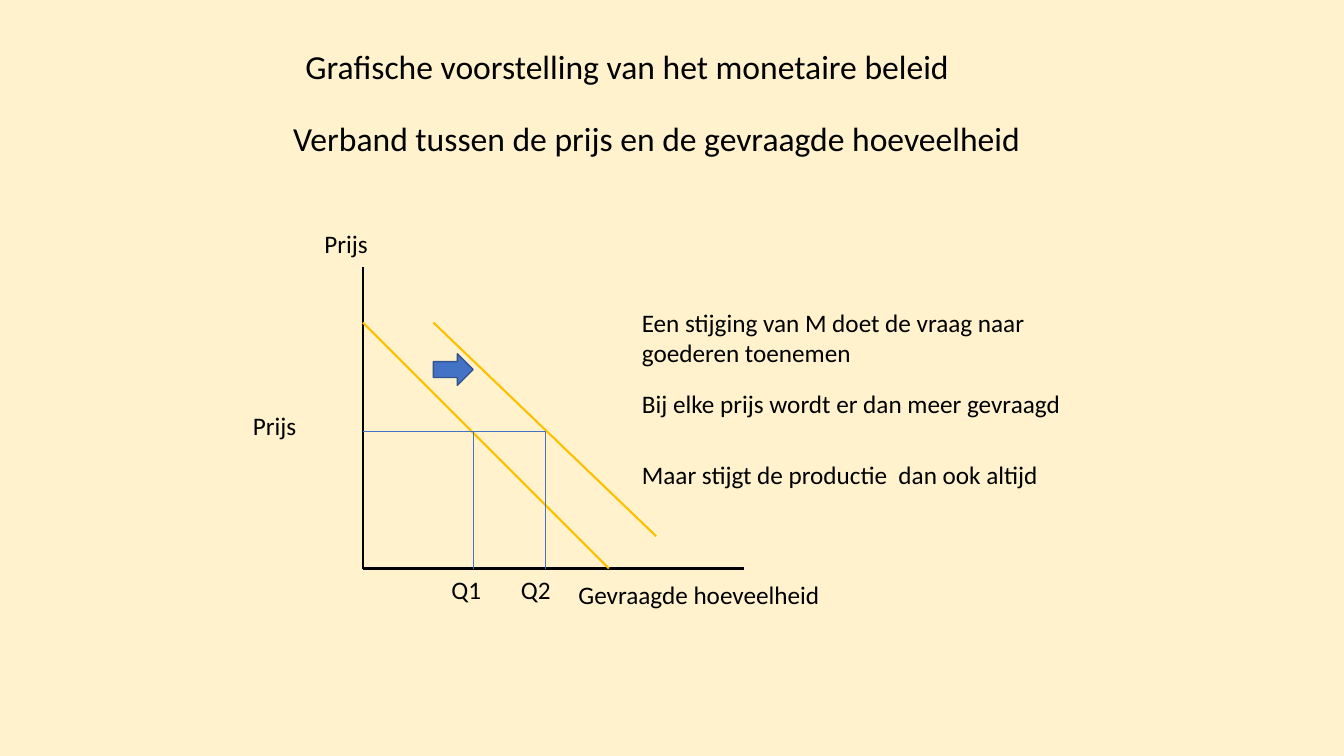
from dataclasses import dataclass

from lxml import etree
from pptx import Presentation
from pptx.dml.color import RGBColor
from pptx.enum import shapes, text
from pptx.oxml.ns import qn
from pptx.util import Pt


@dataclass(frozen=True)
class Theme:
    font: str = "Calibri"
    background: str = "FFF2CC"
    ink: str = "000000"
    demand: str = "FFC000"
    accent: str = "4472C4"
    accent_edge: str = "325491"
    heading: int = 24
    label: int = 18


THEME = Theme()

# Chart positions in points
ORIGIN_X, ORIGIN_Y = 259.2, 406.1
AXIS_TOP, AXIS_RIGHT = 190.8, 531.4
DEMAND_TOP = 230.4
SHIFT_X = 309.6
PRICE_Y = 308.2
Q1_X, Q2_X = 338.4, 389.5
NOTES_X = 451.4


def rgb(value):
    return RGBColor.from_string(value)


def format_text(sp, content, size):
    tf = sp.text_frame
    tf.text = content
    tf.word_wrap = True
    tf.auto_size = text.MSO_AUTO_SIZE.SHAPE_TO_FIT_TEXT
    tf.vertical_anchor = text.MSO_ANCHOR.TOP
    p = tf.paragraphs[0]
    p.alignment = text.PP_ALIGN.LEFT
    font = p.runs[0].font
    font.name, font.size = THEME.font, Pt(size)
    font.color.rgb = rgb(THEME.ink)


def add_title(s, content, left, top, width, height):
    sp = s.shapes.title
    sp.left, sp.top, sp.width, sp.height = map(Pt, (left, top, width, height))
    format_text(sp, content, THEME.heading)


def add_label(s, content, left, top, width, height=29, size=THEME.label):
    sp = s.shapes.add_textbox(*map(Pt, (left, top, width, height)))
    format_text(sp, content, size)


def add_line(s, x1, y1, x2, y2, color, width=1.5):
    line = s.shapes.add_connector(
        shapes.MSO_CONNECTOR.STRAIGHT, *map(Pt, (x1, y1, x2, y2)))
    line.line.color.rgb = rgb(color)
    line.line.width = Pt(width)
    etree.SubElement(line._element.spPr, qn("a:effectLst"))


def add_shift_arrow(s, left, top, width, height):
    sp = s.shapes.add_shape(
        shapes.MSO_SHAPE.RIGHT_ARROW, *map(Pt, (left, top, width, height)))
    sp.shadow.inherit = False
    sp.fill.solid()
    sp.fill.fore_color.rgb = rgb(THEME.accent)
    sp.line.color.rgb = rgb(THEME.accent_edge)
    sp.line.width = Pt(1)


def main():
    prs = Presentation()
    prs.slide_width, prs.slide_height = Pt(960), Pt(540)
    s = prs.slides.add_slide(prs.slide_layouts.get_by_name("Title Only"))
    s.background.fill.solid()
    s.background.fill.fore_color.rgb = rgb(THEME.background)

    # Headings
    add_title(s, "Grafische voorstelling van het monetaire beleid",
              211, 29.5, 547, 36)
    add_label(s, "Verband tussen de prijs en de gevraagde hoeveelheid",
              202.3, 80.6, 584, 36, THEME.heading)

    # Axes
    add_line(s, ORIGIN_X, AXIS_TOP, ORIGIN_X, ORIGIN_Y, THEME.ink)
    add_line(s, ORIGIN_X, ORIGIN_Y, AXIS_RIGHT, ORIGIN_Y, THEME.ink)

    # Demand before and after the shift
    add_line(s, ORIGIN_X, DEMAND_TOP, 434.9, ORIGIN_Y, THEME.demand)
    add_line(s, SHIFT_X, DEMAND_TOP, 468.7, 383, THEME.demand)

    # Guides for the price and both quantities
    add_line(s, ORIGIN_X, PRICE_Y, Q2_X, PRICE_Y, THEME.accent, 0.5)
    for x in (Q1_X, Q2_X):
        add_line(s, x, PRICE_Y, x, ORIGIN_Y, THEME.accent, 0.5)
    add_shift_arrow(s, SHIFT_X, 252.7, 28.4, 22.6)

    # Chart labels
    for content, left, top, width in (
        ("Prijs", 224.6, 159.8, 73.4),
        ("Prijs", 173.5, 289.4, 73.4),
        ("Q1", 315.4, 406.8, 41.8),
        ("Q2", 365, 406.8, 41.8),
        ("Gevraagde hoeveelheid", 406.1, 410.4, 201.6),
    ):
        add_label(s, content, left, top, width)

    # Explanation
    for content, top, width, height in (
        ("Een stijging van M doet de vraag naar goederen toenemen",
         216, 334.8, 51),
        ("Bij elke prijs wordt er dan meer gevraagd", 273.6, 323.3, 29),
        ("Maar stijgt de productie  dan ook altijd", 324.7, 351.4, 29),
    ):
        add_label(s, content, NOTES_X, top, width, height)

    prs.save("out.pptx")


if __name__ == "__main__":
    main()
